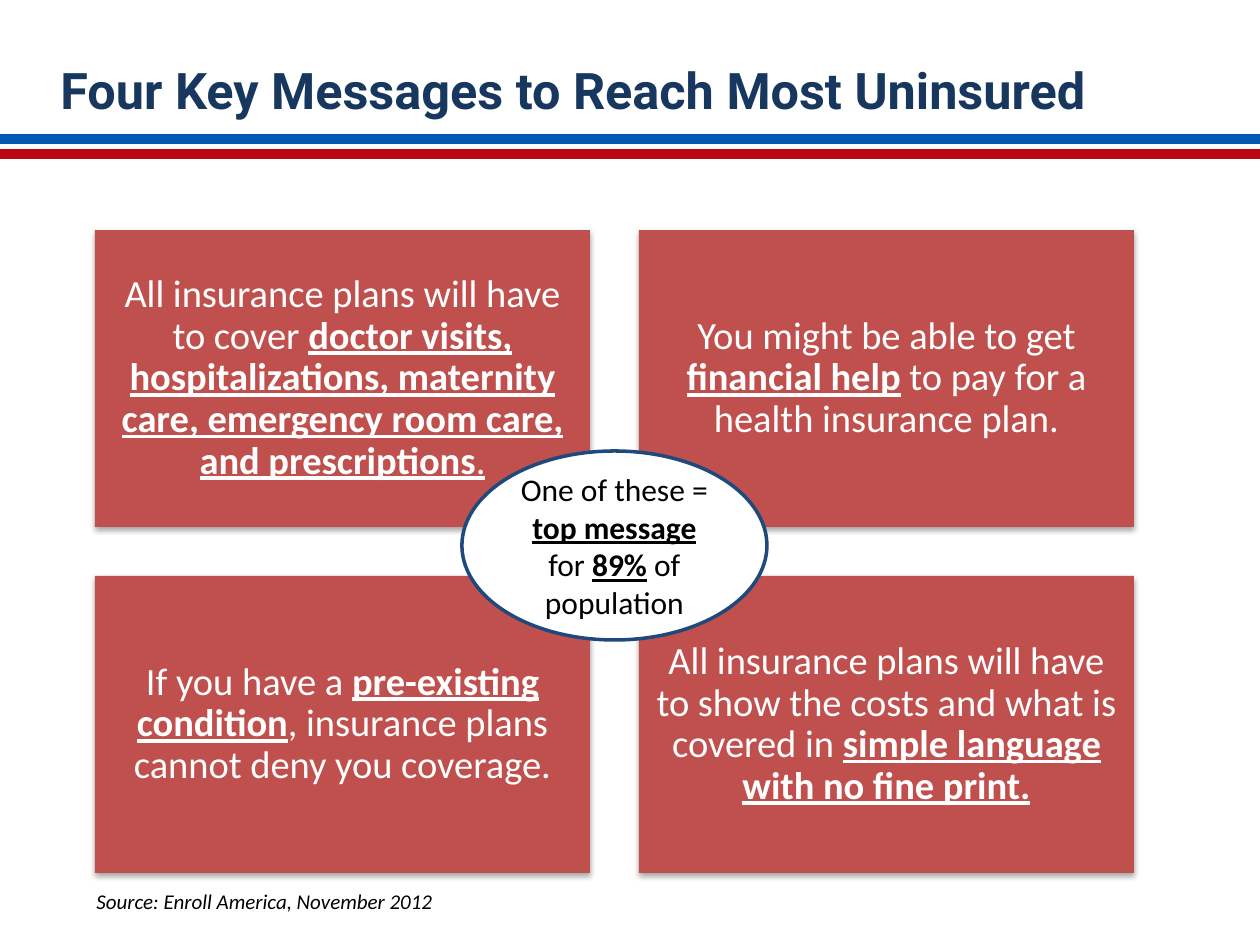
"""Build the slide of four key messages for reaching the uninsured."""
import lxml.etree
import pptx
import pptx.dml.color
import pptx.enum.shapes
import pptx.enum.text
import pptx.util

THEME = {
    "blue": "0058B0", "white": "FFFFFF", "red": "BB0512", "card": "C0504D",
    "navy": "17375E", "rim": "1F497D", "black": "000000",
    "head": 28.8, "body": 22, "hub": 18, "note": 12,
    "sans": "Calibri", "bold": "Roboto",
}
PX = 914400 / 126
KIND = pptx.enum.shapes.MSO_SHAPE
ALIGN = pptx.enum.text.PP_ALIGN
ANCHOR = pptx.enum.text.MSO_ANCHOR
PLAIN = {"bold": False, "underline": False}
STRONG = {"bold": True, "underline": True}
UNDER = {"bold": False, "underline": True}
SHADE = """<a:outerShdw xmlns:a="http://schemas.openxmlformats.org/drawingml/2006/main"
 blurRad="40000" dist="23000" dir="5400000" rotWithShape="0">
<a:srgbClr val="000000"><a:alpha val="35000"/></a:srgbClr></a:outerShdw>"""


def color(name):
    return pptx.dml.color.RGBColor.from_string(THEME[name])


def write(shape, runs, size, ink, face="sans", align=ALIGN.LEFT, space=1.0,
          anchor=ANCHOR.TOP, pad=None):
    frame = shape.text_frame
    look = {"word_wrap": True, "vertical_anchor": anchor}
    if pad is not None:
        for side in ("left", "top", "right", "bottom"):
            look["margin_" + side] = round(pad * PX)
    for key, val in look.items():
        setattr(frame, key, val)
    para = frame.paragraphs[0]
    para.alignment = align
    para.line_spacing = space
    for text, style in runs:
        run = para.add_run()
        run.text = text
        font = {"size": pptx.util.Pt(THEME[size]), "name": THEME[face], **style}
        for key, val in font.items():
            setattr(run.font, key, val)
        run.font.color.rgb = color(ink)


deck = pptx.Presentation()
deck.slide_width = round(1260 * PX)
deck.slide_height = round(945 * PX)
slide = deck.slides.add_slide(deck.slide_layouts[6])
shapes = slide.shapes

for top, name in ((136, "blue"), (147, "white"), (151, "red")):
    band = shapes.add_shape(KIND.RECTANGLE, 0, round(top * PX), deck.slide_width, round(6 * PX))
    band.shadow.inherit = False
    band.fill.solid()
    band.fill.fore_color.rgb = color(name)
    band.line.color.rgb = color(name)
    band.line.width = pptx.util.Pt(2)

cards = [
    [("All insurance plans will have to cover ", PLAIN),
     ("doctor visits, hospitalizations, maternity care, emergency room care, "
      "and prescriptions", STRONG),
     (".", UNDER)],
    [("You might be able to get ", PLAIN), ("financial help", STRONG),
     (" to pay for a health insurance plan.", PLAIN)],
    [("If you have a ", PLAIN), ("pre-existing condition", STRONG),
     (", insurance plans cannot deny you coverage.", PLAIN)],
    [("All insurance plans will have to show the costs and what is covered in ", PLAIN),
     ("simple language with no fine print.", STRONG)],
]
wide, high, gap = 495, 297, 49
for num, runs in enumerate(cards):
    row, col = divmod(num, 2)
    left, top = 95 + col * (wide + gap), 230 + row * (high + gap)
    card = shapes.add_shape(KIND.RECTANGLE, *(round(n * PX) for n in (left, top, wide, high)))
    card.shadow.inherit = False
    card.element.spPr.effectLst.append(lxml.etree.fromstring(SHADE)) if hasattr(
        card.element.spPr, "effectLst") else None
    card.fill.solid()
    card.fill.fore_color.rgb = color("card")
    card.line.fill.background()
    write(card, runs, "body", "white", align=ALIGN.CENTER, space=0.9,
          anchor=ANCHOR.MIDDLE, pad=11)

title = shapes.add_textbox(*(round(n * PX) for n in (48, 53, 1187, 126)))
write(title, [("Four Key Messages to Reach Most Uninsured", {"bold": True})],
      "head", "navy", face="bold")

hub = shapes.add_shape(KIND.OVAL, *(round(n * PX) for n in (462, 451, 305, 189)))
hub.shadow.inherit = False
hub.fill.solid()
hub.fill.fore_color.rgb = color("white")
hub.line.color.rgb = color("rim")
hub.line.width = pptx.util.Pt(2)
write(hub, [("One of these = ", PLAIN), ("top message ", STRONG), ("for ", PLAIN),
            ("89%", STRONG), (" of population", PLAIN)],
      "hub", "black", align=ALIGN.CENTER, anchor=ANCHOR.MIDDLE)

note = shapes.add_textbox(*(round(n * PX) for n in (84, 882, 483, 38)))
write(note, [("Source: Enroll America, November 2012", {"italic": True})], "note", "black")

deck.save("out.pptx")
